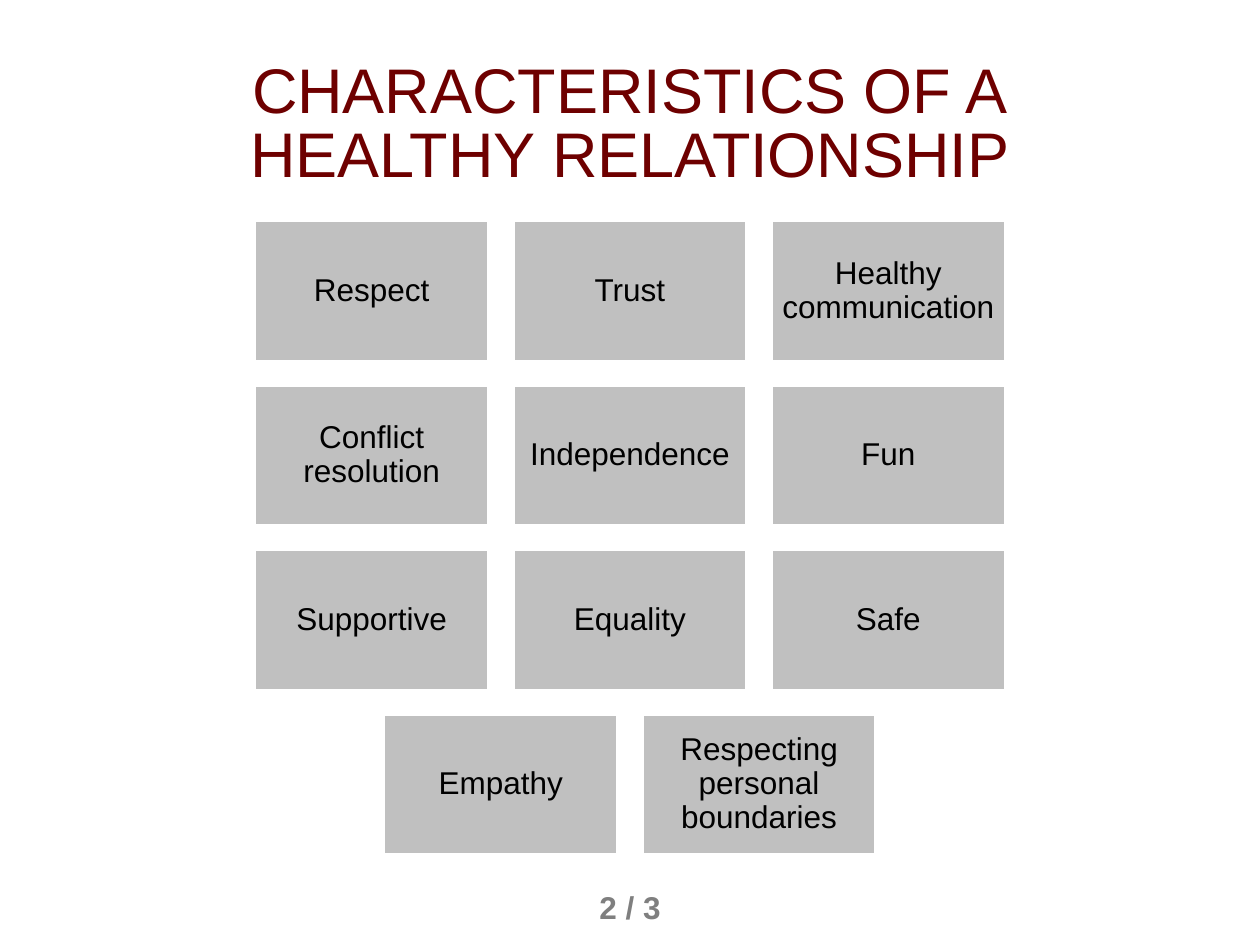
from pptx import Presentation
from pptx import util as u
from pptx.dml.color import RGBColor
from pptx.enum import shapes, text

WIDTH, HEIGHT = 10, 7.5
COLORS = {"title": "6E0000", "card": "C0C0C0", "border": "FFFFFF",
          "body": "000000", "page": "7F7F7F"}
FONT = "Arial"

# Card grid, in inches; every row is centred on the slide
CARD_WIDTH, CARD_HEIGHT = 1.86, 1.12
COLUMN_STEP, ROW_STEP = 2.05, 1.305
GRID_TOP = 1.75
CARD_ROWS = [
    ["Respect", "Trust", "Healthy communication"],
    ["Conflict resolution", "Independence", "Fun"],
    ["Supportive", "Equality", "Safe"],
    ["Empathy", "Respecting personal boundaries"],
]


def color(name):
    return RGBColor.from_string(COLORS[name])


def write(shape, lines, size, color_name, spacing=1.0, bold=False):
    """Fill a shape with one centred paragraph, one run per line."""
    shape.text_frame.word_wrap = True
    paragraph = shape.text_frame.paragraphs[0]
    paragraph.alignment = text.PP_ALIGN.CENTER
    paragraph.line_spacing = spacing
    for index, line in enumerate(lines):
        if index:
            paragraph.add_line_break()
        run = paragraph.add_run()
        run.text = line
        run.font.name = FONT
        run.font.size = u.Pt(size)
        run.font.bold = bold
        run.font.color.rgb = color(color_name)


def add_label(slide, top, width, height, lines, size, color_name, **style):
    """Add a text box centred across the slide."""
    left = (WIDTH - width) / 2
    box = slide.shapes.add_textbox(*map(u.Inches, (left, top, width, height)))
    write(box, lines, size, color_name, **style)


def add_card(slide, left, top, label):
    card = slide.shapes.add_shape(
        shapes.MSO_SHAPE.RECTANGLE,
        *map(u.Inches, (left, top, CARD_WIDTH, CARD_HEIGHT)))
    card.shadow.inherit = False
    card.fill.solid()
    card.fill.fore_color.rgb = color("card")
    card.line.color.rgb = color("border")
    card.line.width = u.Pt(2)
    frame = card.text_frame
    frame.vertical_anchor = text.MSO_ANCHOR.MIDDLE
    frame.margin_left = frame.margin_right = u.Inches(0.07)
    frame.margin_top = frame.margin_bottom = u.Inches(0.07)
    write(card, [label], 18, "body", spacing=0.9)


def add_card_grid(slide):
    for row, labels in enumerate(CARD_ROWS):
        row_width = (len(labels) - 1) * COLUMN_STEP + CARD_WIDTH
        row_left = (WIDTH - row_width) / 2
        for column, label in enumerate(labels):
            add_card(slide, row_left + column * COLUMN_STEP,
                     GRID_TOP + row * ROW_STEP, label)


def main():
    presentation = Presentation()
    presentation.slide_width = u.Inches(WIDTH)
    presentation.slide_height = u.Inches(HEIGHT)
    slide = presentation.slides.add_slide(presentation.slide_layouts[6])

    # Title
    add_label(slide, 0.44, 9.12, 1.15,
              ["CHARACTERISTICS OF A", "HEALTHY RELATIONSHIP"],
              36, "title", spacing=0.85)
    # Characteristics
    add_card_grid(slide)
    # Page counter
    add_label(slide, 7, 1, 0.4, ["2 / 3"], 18, "page", bold=True)

    presentation.save("out.pptx")


if __name__ == "__main__":
    main()
